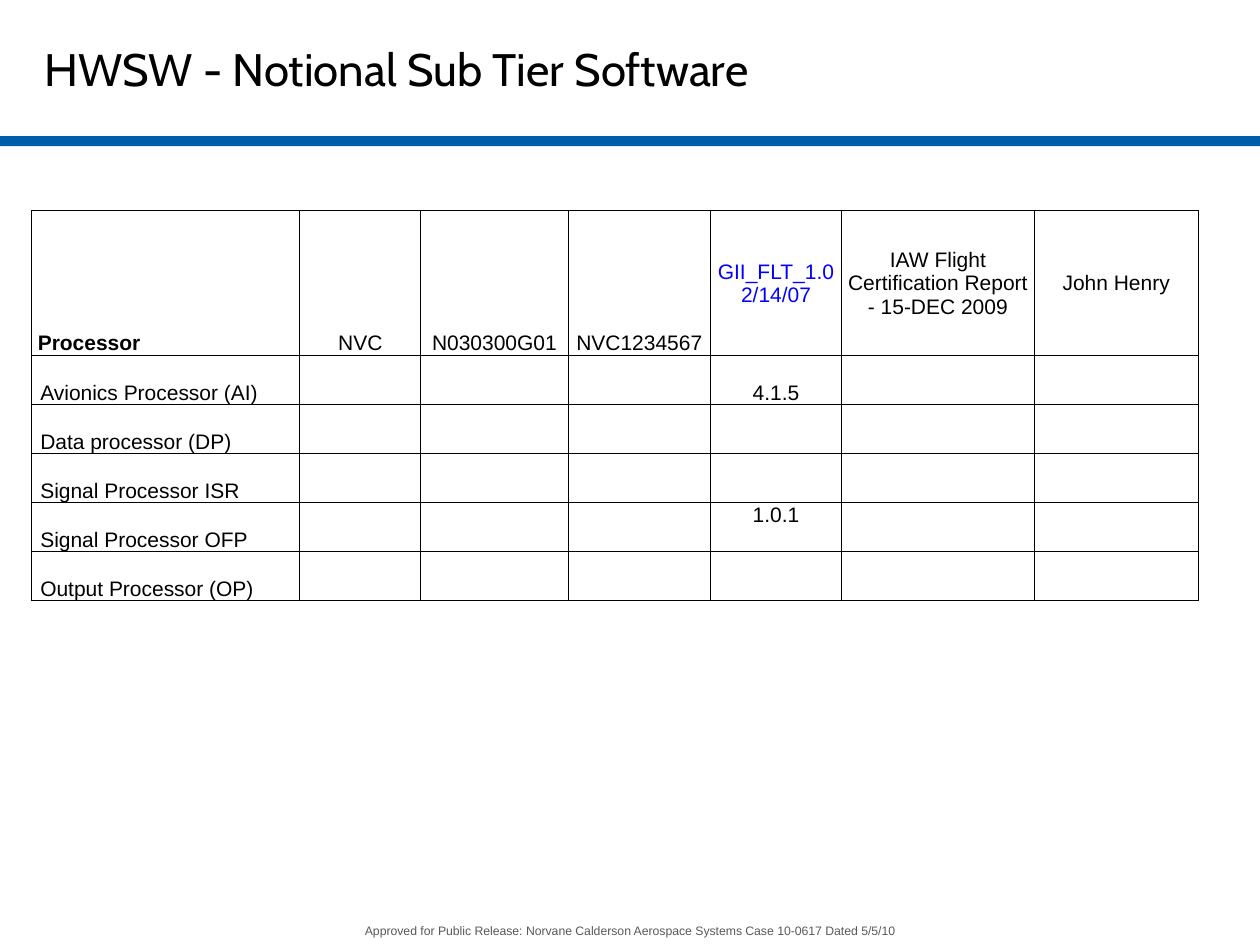
import pptx
import pptx.dml.color
import pptx.enum.shapes
import pptx.enum.text
import pptx.oxml
import pptx.oxml.ns
import pptx.util

Inches = pptx.util.Inches
ALIGN = pptx.enum.text.PP_ALIGN
ANCHOR = pptx.enum.text.MSO_ANCHOR

COLORS = {"black": "000000", "white": "FFFFFF", "bar": "005DAA",
          "link": "0000FF", "footer": "595959"}

COLUMN_WIDTHS = [2.13, 0.96, 1.17, 1.13, 1.04, 1.53, 1.3]
ROW_HEIGHTS = [1.15] + [0.39] * 5
HEADER = ["Processor", "NVC", "N030300G01", "NVC1234567", "GII_FLT_1.0\v2/14/07",
          "IAW Flight Certification Report - 15-DEC 2009", "John Henry"]
PROCESSORS = ["Avionics Processor (AI)", "Data processor (DP)", "Signal Processor ISR",
              "Signal Processor OFP", "Output Processor (OP)"]
VERSION_COLUMN = 4
VERSIONS = {1: "4.1.5", 4: "1.0.1"}


class SlideBuilder:
    """Holds the text style and the current slide."""

    font_name = "Arial"
    title_font = "Cabin"
    body_size = 12

    def __init__(self, slide):
        self.slide = slide

    def color(self, name):
        return pptx.dml.color.RGBColor.from_string(COLORS[name])

    def fill_text(self, frame, text, size, color="black", align=ALIGN.LEFT, bold=False,
                  font=None):
        frame.word_wrap = True
        paragraph = frame.paragraphs[0]
        paragraph.text = text
        paragraph.alignment = align
        paragraph.font.name = font or self.font_name
        paragraph.font.size = pptx.util.Pt(size)
        paragraph.font.bold = bold
        paragraph.font.color.rgb = self.color(color)

    def bar(self, left, top, width, height, color):
        shape = self.slide.shapes.add_shape(
            pptx.enum.shapes.MSO_SHAPE.RECTANGLE,
            Inches(left), Inches(top), Inches(width), Inches(height))
        shape.shadow.inherit = False
        shape.fill.solid()
        shape.fill.fore_color.rgb = self.color(color)
        shape.line.fill.background()

    def title(self, text, left, top, width, height, size):
        title = self.slide.shapes.title
        title.left, title.top = Inches(left), Inches(top)
        title.width, title.height = Inches(width), Inches(height)
        title.text_frame.vertical_anchor = ANCHOR.MIDDLE
        self.fill_text(title.text_frame, text, size, font=self.title_font)

    def text(self, text, left, top, width, height, size, color):
        box = self.slide.shapes.add_textbox(
            Inches(left), Inches(top), Inches(width), Inches(height))
        self.fill_text(box.text_frame, text, size, color, ALIGN.CENTER)

    def table(self, left, top, widths, heights):
        table = self.slide.shapes.add_table(
            len(heights), len(widths), Inches(left), Inches(top),
            Inches(sum(widths)), Inches(sum(heights))).table
        table.first_row = table.horz_banding = False
        for column, width in zip(table.columns, widths):
            column.width = Inches(width)
        for row, height in zip(table.rows, heights):
            row.height = Inches(height)
        for cell in table.iter_cells():
            self.cell(cell, "")
            self.borders(cell)
        return table

    def cell(self, cell, text, anchor=ANCHOR.BOTTOM, inset=0.01, **style):
        cell.margin_left = Inches(inset)
        cell.margin_right = cell.margin_top = Inches(0.01)
        cell.margin_bottom = 0
        cell.vertical_anchor = anchor
        cell.fill.solid()
        cell.fill.fore_color.rgb = self.color("white")
        self.fill_text(cell.text_frame, text, self.body_size, **style)

    def borders(self, cell):
        properties = cell._tc.get_or_add_tcPr()
        for index, side in enumerate(("lnL", "lnR", "lnT", "lnB")):
            properties.insert(index, pptx.oxml.parse_xml(
                f'<a:{side} {pptx.oxml.ns.nsdecls("a")} w="{pptx.util.Pt(0.5)}"><a:solidFill>'
                f'<a:srgbClr val="{COLORS["black"]}"/></a:solidFill></a:{side}>'))


def main():
    presentation = pptx.Presentation()
    presentation.slide_width, presentation.slide_height = Inches(10), Inches(7.5)
    builder = SlideBuilder(presentation.slides.add_slide(presentation.slide_layouts[5]))

    # Heading
    builder.bar(0, 1.08, 10, 0.08, "bar")
    builder.title("HWSW - Notional Sub Tier Software", 0.25, 0.08, 7.33, 0.92, 26)

    # Table: heading row
    table = builder.table(0.25, 1.67, COLUMN_WIDTHS, ROW_HEIGHTS)
    builder.cell(table.cell(0, 0), HEADER[0], inset=0.05, bold=True)
    for column, text in enumerate(HEADER[1:], start=1):
        builder.cell(table.cell(0, column), text,
                     anchor=ANCHOR.MIDDLE if column >= VERSION_COLUMN else ANCHOR.BOTTOM,
                     color="link" if column == VERSION_COLUMN else "black",
                     align=ALIGN.CENTER)

    # Table: processors and their versions
    for row, text in enumerate(PROCESSORS, start=1):
        builder.cell(table.cell(row, 0), text, inset=0.07)
    for row, text in VERSIONS.items():
        builder.cell(table.cell(row, VERSION_COLUMN), text, align=ALIGN.CENTER,
                     anchor=ANCHOR.TOP if row == 4 else ANCHOR.BOTTOM)

    # Release line
    builder.text("Approved for Public Release: Norvane Calderson Aerospace Systems "
                 "Case 10-0617 Dated 5/5/10", 0, 7.28, 10, 0.22, 7, "footer")

    presentation.save("out.pptx")


if __name__ == "__main__":
    main()
